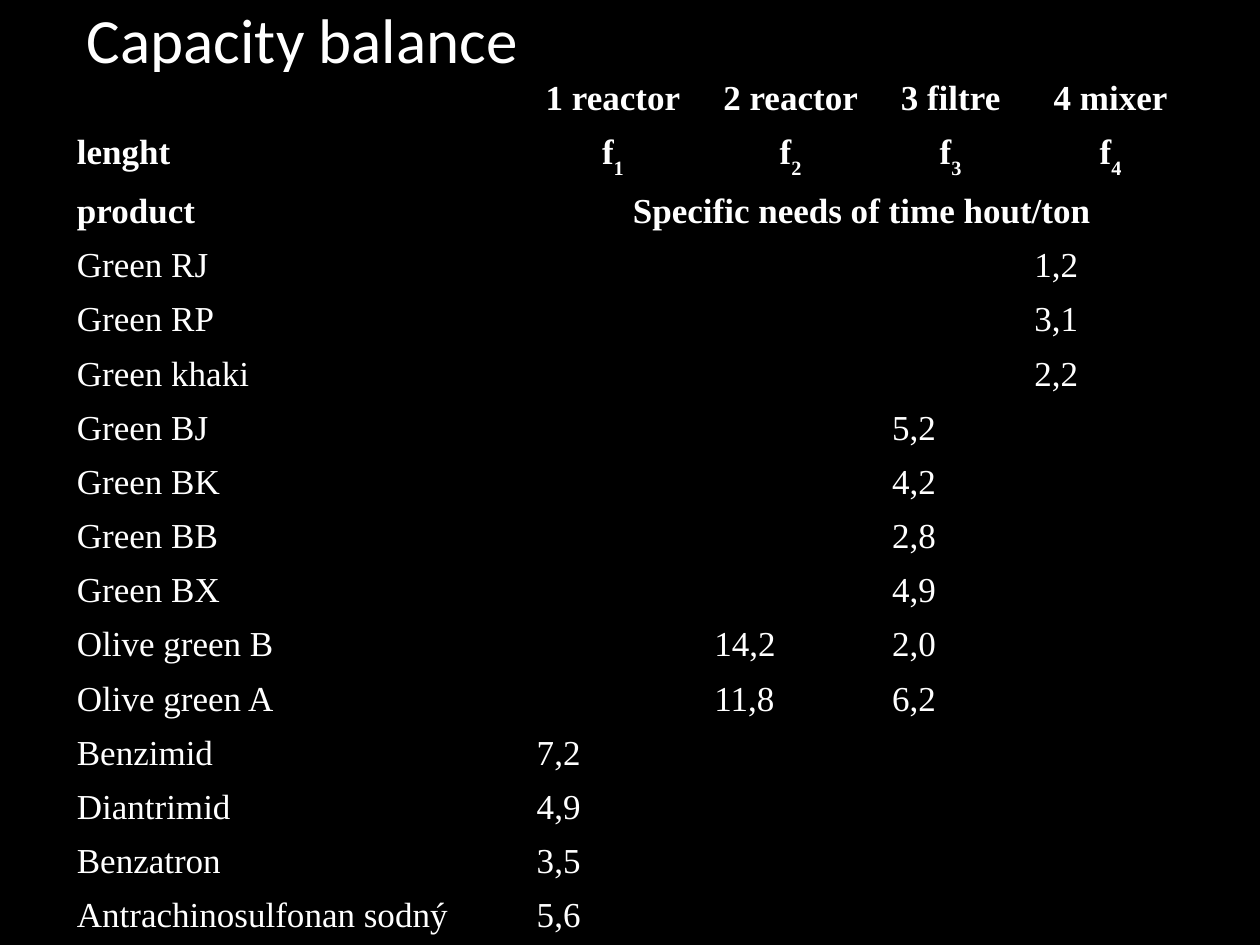
"""Build the capacity balance slide: a title above a table of time needs per machine."""
import pptx
import pptx.dml.color
import pptx.enum.text
import pptx.oxml
import pptx.oxml.ns
import pptx.util

Inches, Pt = pptx.util.Inches, pptx.util.Pt
PP_ALIGN = pptx.enum.text.PP_ALIGN
RGB = pptx.dml.color.RGBColor.from_string
COLORS = {"background": "000000", "text": "FFFFFF", "border": "000000"}
TABLE_FONT = {"name": "Times New Roman", "size": Pt(20)}
COL_WIDTHS = [3.65, 1.41, 1.41, 1.13, 1.41]
ROW_HEIGHT = 0.43
HEADER_ROWS = 3
ROWS = [
    ["", "1 reactor", "2 reactor", "3 filtre", "4 mixer"],
    ["lenght", "f_1", "f_2", "f_3", "f_4"],
    ["product", "Specific needs of time hout/ton", "", "", ""],
    ["Green RJ", "", "", "", "1,2"],
    ["Green RP", "", "", "", "3,1"],
    ["Green khaki", "", "", "", "2,2"],
    ["Green BJ", "", "", "5,2", ""],
    ["Green BK", "", "", "4,2", ""],
    ["Green BB", "", "", "2,8", ""],
    ["Green BX", "", "", "4,9", ""],
    ["Olive green B", "", "14,2", "2,0", ""],
    ["Olive green A", "", "11,8", "6,2", ""],
    ["Benzimid", "7,2", "", "", ""],
    ["Diantrimid", "4,9", "", "", ""],
    ["Benzatron", "3,5", "", "", ""],
    ["Antrachinosulfonan sodný", "5,6", "", "", ""],
]


def add_run(p, text, fmt):
    r = p.add_run()
    r.text = text
    for name, value in fmt.items():
        setattr(r.font, name, value)
    r.font.color.rgb = RGB(COLORS["text"])
    return r


def set_borders(cell):
    tcPr = cell._tc.get_or_add_tcPr()
    for side in ("lnL", "lnR", "lnT", "lnB"):
        tcPr.append(pptx.oxml.parse_xml(
            f'<a:{side} {pptx.oxml.ns.nsdecls("a")} w="{Pt(1)}"><a:solidFill>'
            f'<a:srgbClr val="{COLORS["border"]}"/></a:solidFill></a:{side}>'))


prs = pptx.Presentation()
prs.slide_width, prs.slide_height = Inches(10), Inches(7.5)
s = prs.slides.add_slide(prs.slide_layouts[5])
s.background.fill.solid()
s.background.fill.fore_color.rgb = RGB(COLORS["background"])

title = s.shapes.title
title.left, title.top = Inches(0.59), Inches(0)
title.width, title.height = Inches(9), Inches(0.68)
title.text_frame.vertical_anchor = pptx.enum.text.MSO_ANCHOR.MIDDLE
p = title.text_frame.paragraphs[0]
p.alignment, p.line_spacing = PP_ALIGN.LEFT, 0.9
add_run(p, "Capacity balance", {"name": "Calibri", "size": Pt(36)})

table = s.shapes.add_table(
    len(ROWS), len(COL_WIDTHS), Inches(0.51), Inches(0.58),
    Inches(sum(COL_WIDTHS)), Inches(ROW_HEIGHT * len(ROWS))).table
table.first_row = table.horz_banding = False
for col, width in zip(table.columns, COL_WIDTHS):
    col.width = Inches(width)
for row in table.rows:
    row.height = Inches(ROW_HEIGHT)
table.cell(2, 1).merge(table.cell(2, 4))

for i, texts in enumerate(ROWS):
    is_header = i < HEADER_ROWS
    for j, text in enumerate(texts):
        cell = table.cell(i, j)
        set_borders(cell)
        cell.fill.background()
        if not text:
            continue
        p = cell.text_frame.paragraphs[0]
        p.alignment = PP_ALIGN.CENTER if is_header and j else PP_ALIGN.LEFT
        pPr = p._p.get_or_add_pPr()
        pPr.set("marL", str(Inches(0.38)))
        pPr.set("indent", str(Inches(-0.38)))
        base, _, subscript = text.partition("_")
        fmt = {**TABLE_FONT, "bold": is_header}
        add_run(p, base, fmt)
        if subscript:
            r = add_run(p, subscript, fmt)
            r._r.get_or_add_rPr().set("baseline", "-30000")

prs.save("out.pptx")
